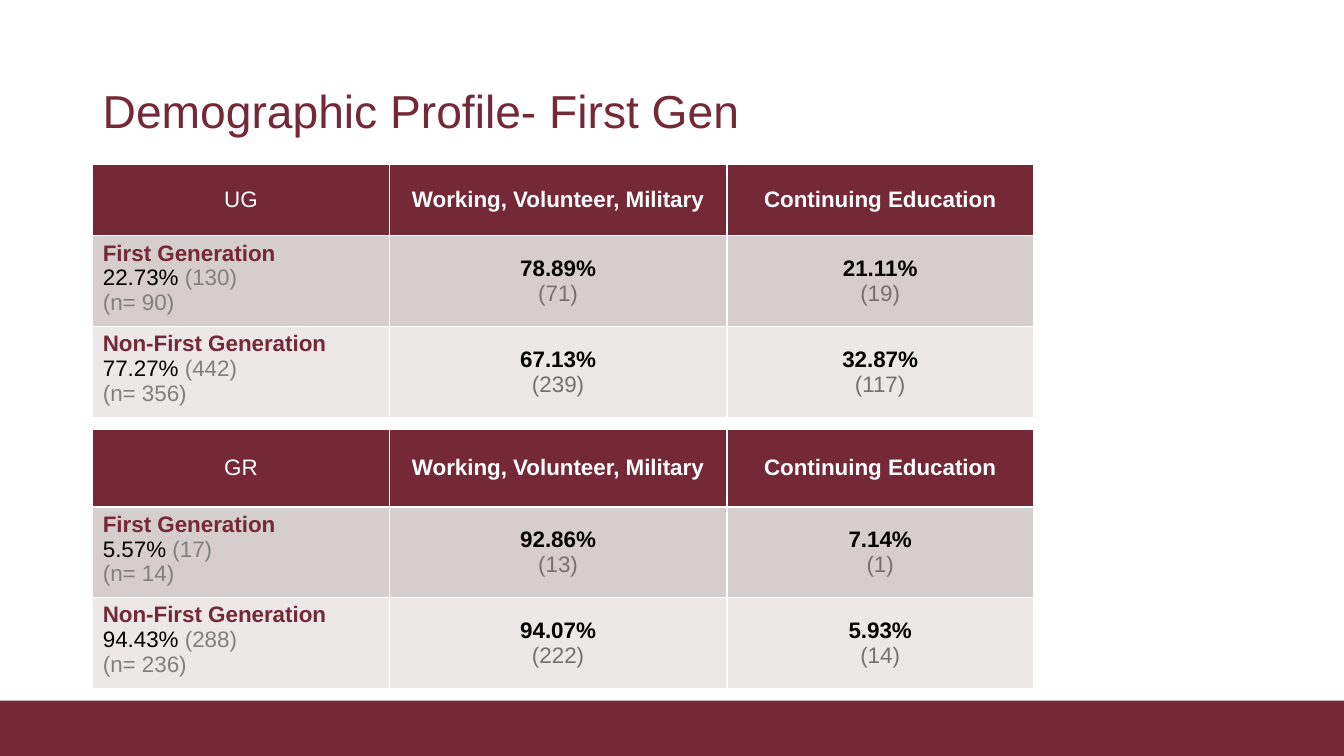
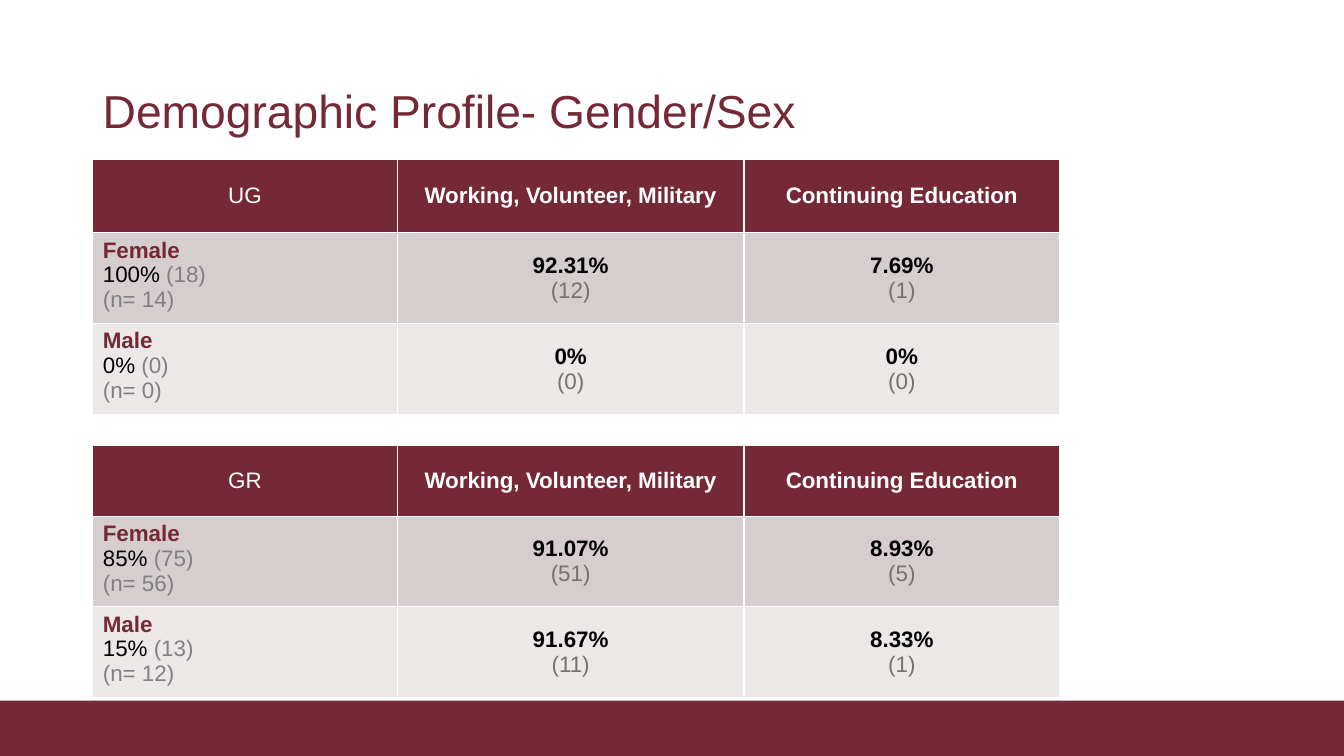
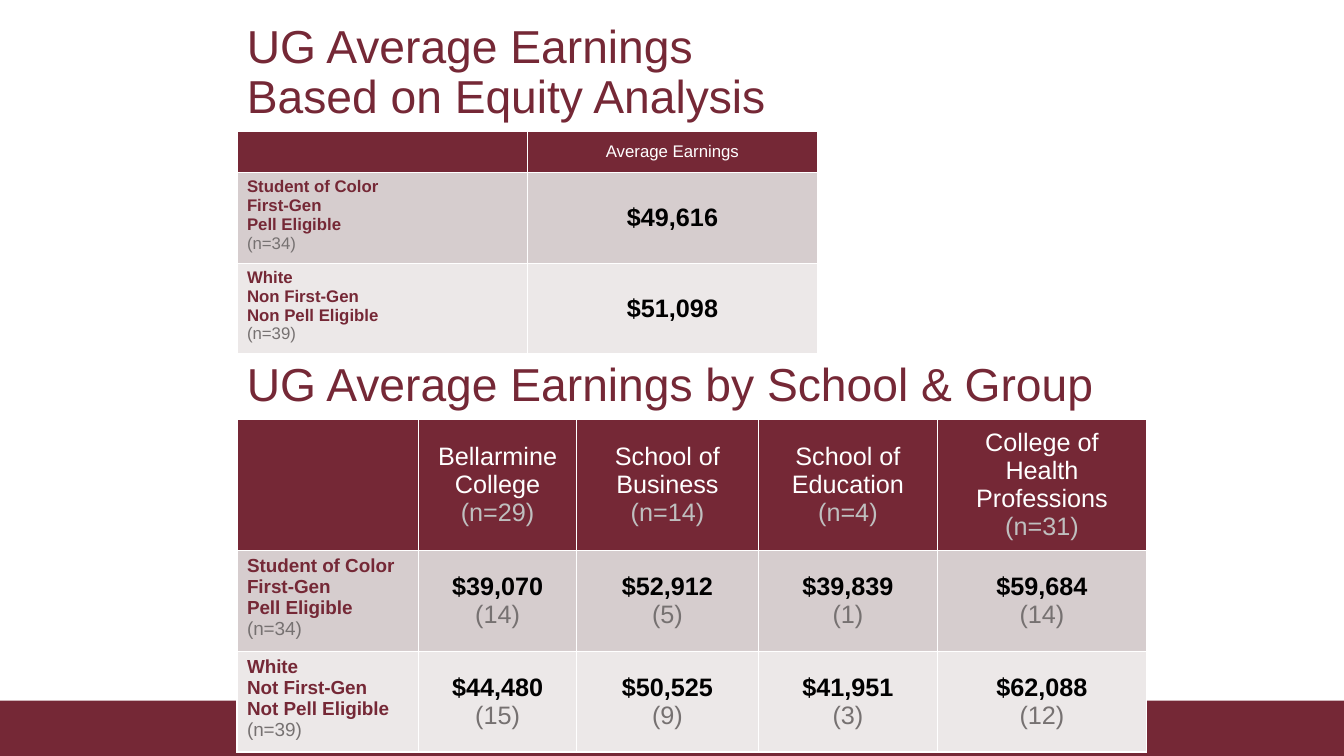
from pptx import Presentation
from pptx import util as u
from pptx.dml.color import RGBColor
from pptx.enum import shapes, text

COLORS = {
    "maroon": "752836", "white": "FFFFFF", "black": "000000",
    "rose": "D6CDCE", "pale": "ECE8E8",
    "gray": "808080", "count": "767171", "silver": "BFBFBF",
}
# Run styles: colour name and weight
RUNS = {
    "title": ("maroon", None),
    "head": ("white", False),
    "head_bold": ("white", True),
    "head_count": ("silver", False),
    "label": ("maroon", True),
    "share": ("black", False),
    "share_count": ("gray", False),
    "figure": ("black", True),
    "count": ("count", False),
}


def rgb(name):
    return RGBColor.from_string(COLORS[name])


class Deck:
    """Holds the shared style and the current slide."""
    font = "Arial"
    title_size = 33

    def __init__(self):
        self.prs = Presentation()
        self.prs.slide_width = u.Inches(13.33)
        self.prs.slide_height = u.Inches(7.5)

    def new_slide(self):
        self.slide = self.prs.slides.add_slide(self.prs.slide_layouts[6])
        self.band()

    def band(self):
        band = self.slide.shapes.add_shape(
            shapes.MSO_SHAPE.RECTANGLE, 0, u.Inches(6.95),
            self.prs.slide_width, u.Inches(0.55))
        band.shadow.inherit = False
        band.fill.solid()
        band.fill.fore_color.rgb = rgb("maroon")
        band.line.fill.background()

    def run(self, paragraph, words, style, size):
        run = paragraph.add_run()
        run.text = words
        color, bold = RUNS[style]
        for name, value in {"name": self.font, "size": u.Pt(size), "bold": bold}.items():
            setattr(run.font, name, value)
        run.font.color.rgb = rgb(color)

    def title(self, lines, left=0.92, top=0.4, width=11.5):
        box = self.slide.shapes.add_textbox(
            u.Inches(left), u.Inches(top), u.Inches(width), u.Inches(1.45))
        frame = box.text_frame
        frame.word_wrap = True
        frame.vertical_anchor = text.MSO_ANCHOR.MIDDLE
        paragraph = frame.paragraphs[0]
        paragraph.line_spacing = 0.9
        for i, line in enumerate(lines):
            if i:
                paragraph.add_line_break()
            self.run(paragraph, line, "title", self.title_size)

    def cell(self, cell, paragraphs, fill, size, centered):
        """Each paragraph is a list of (words, run style) pairs."""
        cell.fill.solid()
        cell.fill.fore_color.rgb = rgb(fill)
        if centered:
            cell.vertical_anchor = text.MSO_ANCHOR.MIDDLE
        for i, runs in enumerate(paragraphs):
            frame = cell.text_frame
            paragraph = frame.add_paragraph() if i else frame.paragraphs[0]
            if centered:
                paragraph.alignment = text.PP_ALIGN.CENTER
            for words, style in runs:
                self.run(paragraph, words, style, size)

    def table(self, left, top, widths, heights, rows, head=16, label=16, figure=16):
        """The default table style supplies the white rules between cells."""
        table = self.slide.shapes.add_table(
            len(rows), len(widths), u.Inches(left), u.Inches(top),
            u.Inches(sum(widths)), u.Inches(sum(heights))).table
        for column, width in zip(table.columns, widths):
            column.width = u.Inches(width)
        for row, height in zip(table.rows, heights):
            row.height = u.Inches(height)
        for r, row in enumerate(rows):
            fill = ("maroon", "rose", "pale")[r]
            for c, paragraphs in enumerate(row):
                is_label = r > 0 and c == 0
                size = head if r == 0 else label if is_label else figure
                self.cell(table.cell(r, c), paragraphs, fill, size, not is_label)


# Cell contents
def figure(value, count):
    return [[(value, "figure")], [(f"({count})", "count")]]


def group_label(names, n):
    return [[(name, "label")] for name in names] + [[(f"(n={n})", "count")]]


def school(lines, n):
    return [[(line, "head")] for line in lines] + [[(f"(n={n})", "head_count")]]


def outcome_rows(level, groups):
    rows = [[[[(level, "head")]],
             [[("Working, Volunteer, Military", "head_bold")]],
             [[("Continuing Education", "head_bold")]]]]
    for name, share, total, n, working, studying in groups:
        rows.append([
            [[(name, "label")],
             [(f"{share} ", "share"), (f"({total})", "share_count")],
             [(f"(n= {n})", "share_count")]],
            figure(*working), figure(*studying)])
    return rows


# Each outcome slide: title, column widths, then top, header height, level and groups
OUTCOMES = [
    ("Demographic Profile- First Gen", [2.94, 3.35, 3.04], [
        (1.63, 0.71, "UG", [
            ("First Generation", "22.73%", 130, 90, ("78.89%", 71), ("21.11%", 19)),
            ("Non-First Generation", "77.27%", 442, 356, ("67.13%", 239), ("32.87%", 117))]),
        (4.26, 0.77, "GR", [
            ("First Generation", "5.57%", 17, 14, ("92.86%", 13), ("7.14%", 1)),
            ("Non-First Generation", "94.43%", 288, 236, ("94.07%", 222), ("5.93%", 14))]),
    ]),
    ("Demographic Profile- Gender/Sex", [3.02, 3.44, 3.13], [
        (1.58, 0.73, "UG", [
            ("Female", "100%", 18, 14, ("92.31%", 12), ("7.69%", 1)),
            ("Male", "0%", 0, 0, ("0%", 0), ("0%", 0))]),
        (4.42, 0.7, "GR", [
            ("Female", "85%", 75, 56, ("91.07%", 51), ("8.93%", 5)),
            ("Male", "15%", 13, 12, ("91.67%", 11), ("8.33%", 1))]),
    ]),
]


def main():
    deck = Deck()

    # Outcomes by demographic group
    for title, widths, levels in OUTCOMES:
        deck.new_slide()
        deck.title([title])
        for top, head_height, level, groups in levels:
            deck.table(0.92, top, widths, [head_height, 0.84, 0.84],
                       outcome_rows(level, groups))

    # Earnings by equity group
    left = 2.35
    deck.new_slide()
    deck.title(["UG Average Earnings", "Based on Equity Analysis"], left, 0, 8.62)
    deck.table(left, 1.3, [2.88, 2.88], [0.41, 0.85, 0.85], [
        [[], [[("Average Earnings", "head")]]],
        [group_label(["Student of Color", "First-Gen", "Pell Eligible"], 34),
         [[("$49,616", "figure")]]],
        [group_label(["White", "Non First-Gen", "Non Pell Eligible"], 39),
         [[("$51,098", "figure")]]],
    ], head=12, label=12, figure=18)

    # Earnings by school and group
    deck.title(["UG Average Earnings by School & Group"], left, 3.11, 9.31)
    health = [[("College of", "head")],
              [("Health Professions ", "head"), ("(n=31)", "head_count")]]
    deck.table(left, 4.16, [1.8, 1.57, 1.8, 1.78, 2.07], [1.21, 0.94, 0.94], [
        [[], school(["Bellarmine College"], 29), school(["School of Business"], 14),
         school(["School of Education"], 4), health],
        [group_label(["Student of Color", "First-Gen", "Pell Eligible"], 34),
         figure("$39,070", 14), figure("$52,912", 5),
         figure("$39,839", 1), figure("$59,684", 14)],
        [group_label(["White", "Not First-Gen", "Not Pell Eligible"], 39),
         figure("$44,480", 15), figure("$50,525", 9),
         figure("$41,951", 3), figure("$62,088", 12)],
    ], head=18, label=13.5, figure=18)

    deck.prs.save("out.pptx")


if __name__ == "__main__":
    main()
